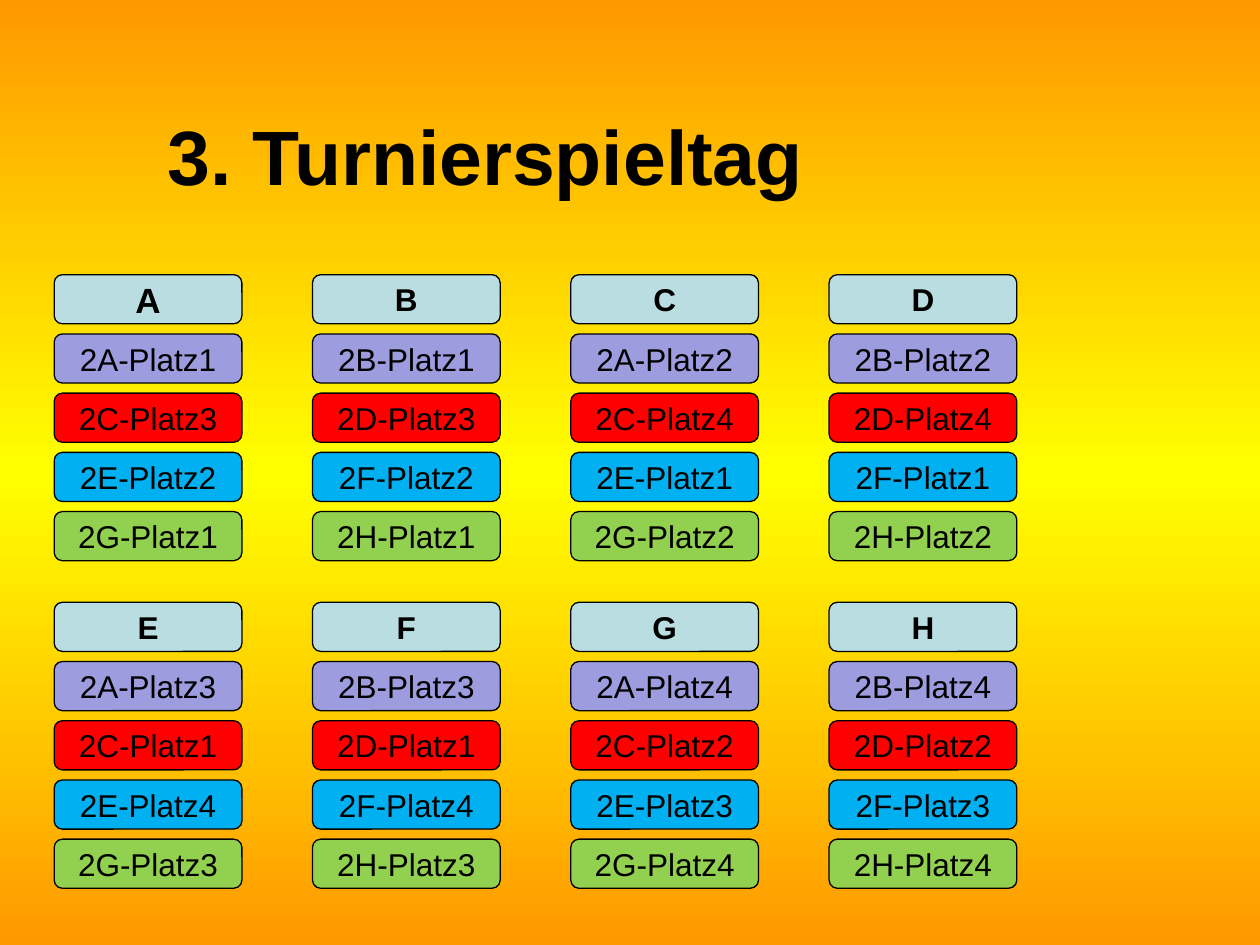
from copy import deepcopy

from pptx import Presentation
from pptx.dml.color import RGBColor
from pptx.enum.shapes import MSO_SHAPE
from pptx.enum.text import MSO_ANCHOR, PP_ALIGN
from pptx.oxml.ns import qn
from pptx.util import Inches, Pt

BOX = MSO_SHAPE.FLOWCHART_ALTERNATE_PROCESS
CENTER, MIDDLE = PP_ALIGN.CENTER, MSO_ANCHOR.MIDDLE

TITLE = "3. Turnierspieltag"
GROUP_ROWS = [
    [
        ("A", "2A-Platz1", "2C-Platz3", "2E-Platz2", "2G-Platz1"),
        ("B", "2B-Platz1", "2D-Platz3", "2F-Platz2", "2H-Platz1"),
        ("C", "2A-Platz2", "2C-Platz4", "2E-Platz1", "2G-Platz2"),
        ("D", "2B-Platz2", "2D-Platz4", "2F-Platz1", "2H-Platz2"),
    ],
    [
        ("E", "2A-Platz3", "2C-Platz1", "2E-Platz4", "2G-Platz3"),
        ("F", "2B-Platz3", "2D-Platz1", "2F-Platz4", "2H-Platz3"),
        ("G", "2A-Platz4", "2C-Platz2", "2E-Platz3", "2G-Platz4"),
        ("H", "2B-Platz4", "2D-Platz2", "2F-Platz3", "2H-Platz4"),
    ],
]
LEVEL_FILLS = ["BADDE1", "9C9CDF", "FF0000", "00B0F0", "92D050"]
BACKGROUND_STOPS = [(0, "FF9900"), (0.5, "FFFF00"), (1, "FF9900")]

LEFT, TOP = 0.43, 2.18
BOX_W, BOX_H = 1.49, 0.39
COLUMN_STEP, LEVEL_STEP, GROUP_STEP = 2.05, 0.47, 2.6


def color(hex_value):
    return RGBColor.from_string(hex_value)


def write(shape, text, size, bold, wrap):
    frame = shape.text_frame
    frame.word_wrap = wrap
    frame.vertical_anchor = MIDDLE
    paragraph = frame.paragraphs[0]
    paragraph.alignment = CENTER
    run = paragraph.add_run()
    run.text = text
    run.font.name = "Arial"
    run.font.size = Pt(size)
    run.font.bold = bold
    run.font.color.rgb = color("000000")


def paint_background(slide):
    fill = slide.background.fill
    fill.gradient()
    fill.gradient_angle = 270  # counter-clockwise: runs from top to bottom
    stop_list = slide.element.find(".//" + qn("a:gsLst"))
    stop_list.append(deepcopy(stop_list[-1]))
    for stop, (position, hex_value) in zip(fill.gradient_stops, BACKGROUND_STOPS):
        stop.position = position
        stop.color.rgb = color(hex_value)


def add_group(slide, left, top, entries):
    for level, (entry, fill) in enumerate(zip(entries, LEVEL_FILLS)):
        box = slide.shapes.add_shape(
            BOX, Inches(left), Inches(top + level * LEVEL_STEP),
            Inches(BOX_W), Inches(BOX_H))
        box.shadow.inherit = False
        box.fill.solid()
        box.fill.fore_color.rgb = color(fill)
        box.line.color.rgb = color("000000")
        box.line.width = Pt(0.75)
        size = 20 if entry == "A" else 18
        write(box, entry, size, bold=level == 0, wrap=False)


def main():
    prs = Presentation()
    prs.slide_width, prs.slide_height = Inches(10), Inches(7.5)
    slide = prs.slides.add_slide(prs.slide_layouts[5])
    paint_background(slide)

    title = slide.shapes.title
    title.left, title.top = Inches(0.39), Inches(0.79)
    title.width, title.height = Inches(6.93), Inches(0.87)
    write(title, TITLE, 44, bold=True, wrap=True)

    for row, groups in enumerate(GROUP_ROWS):
        for column, entries in enumerate(groups):
            add_group(slide, LEFT + column * COLUMN_STEP,
                      TOP + row * GROUP_STEP, entries)
    prs.save("out.pptx")


if __name__ == "__main__":
    main()
